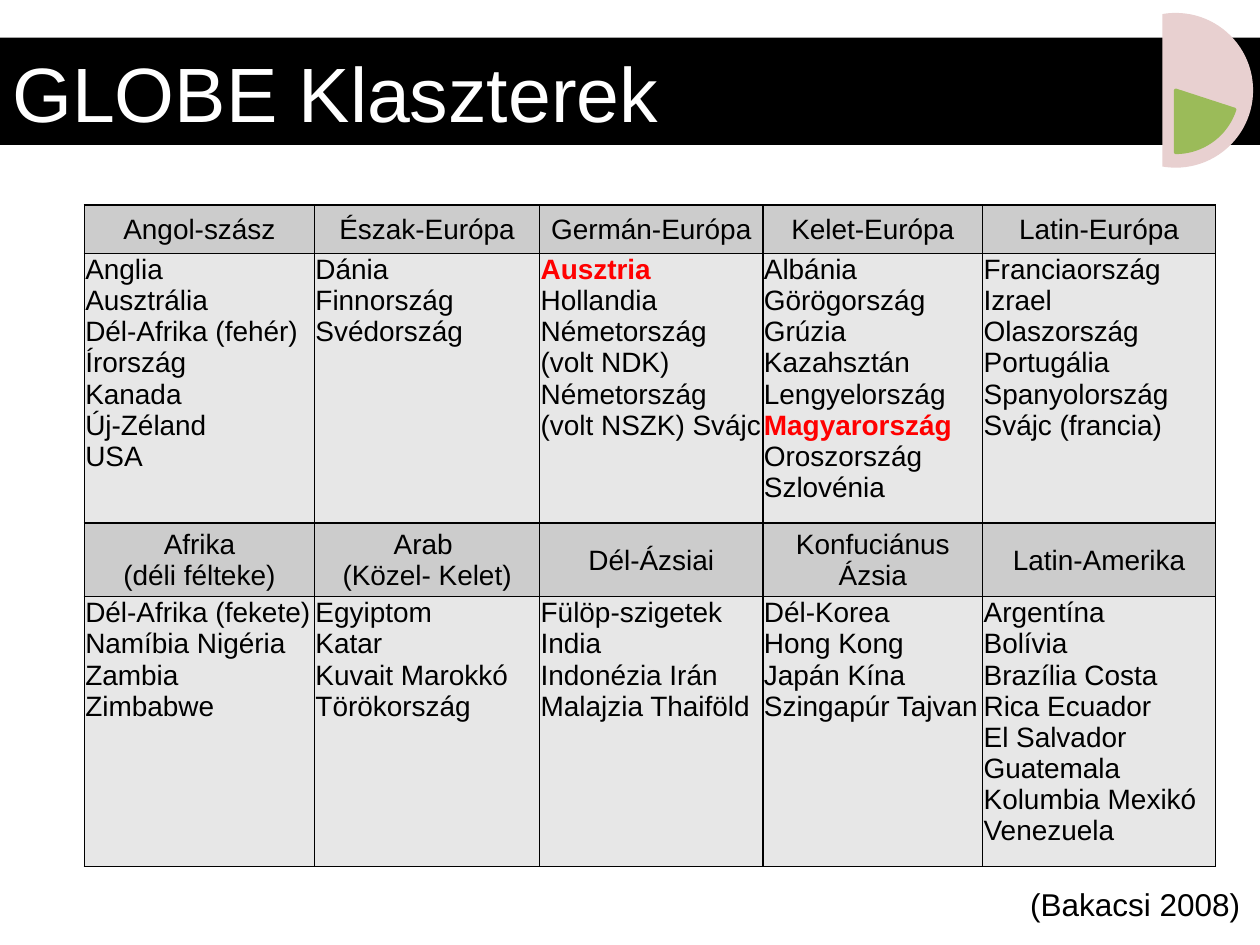
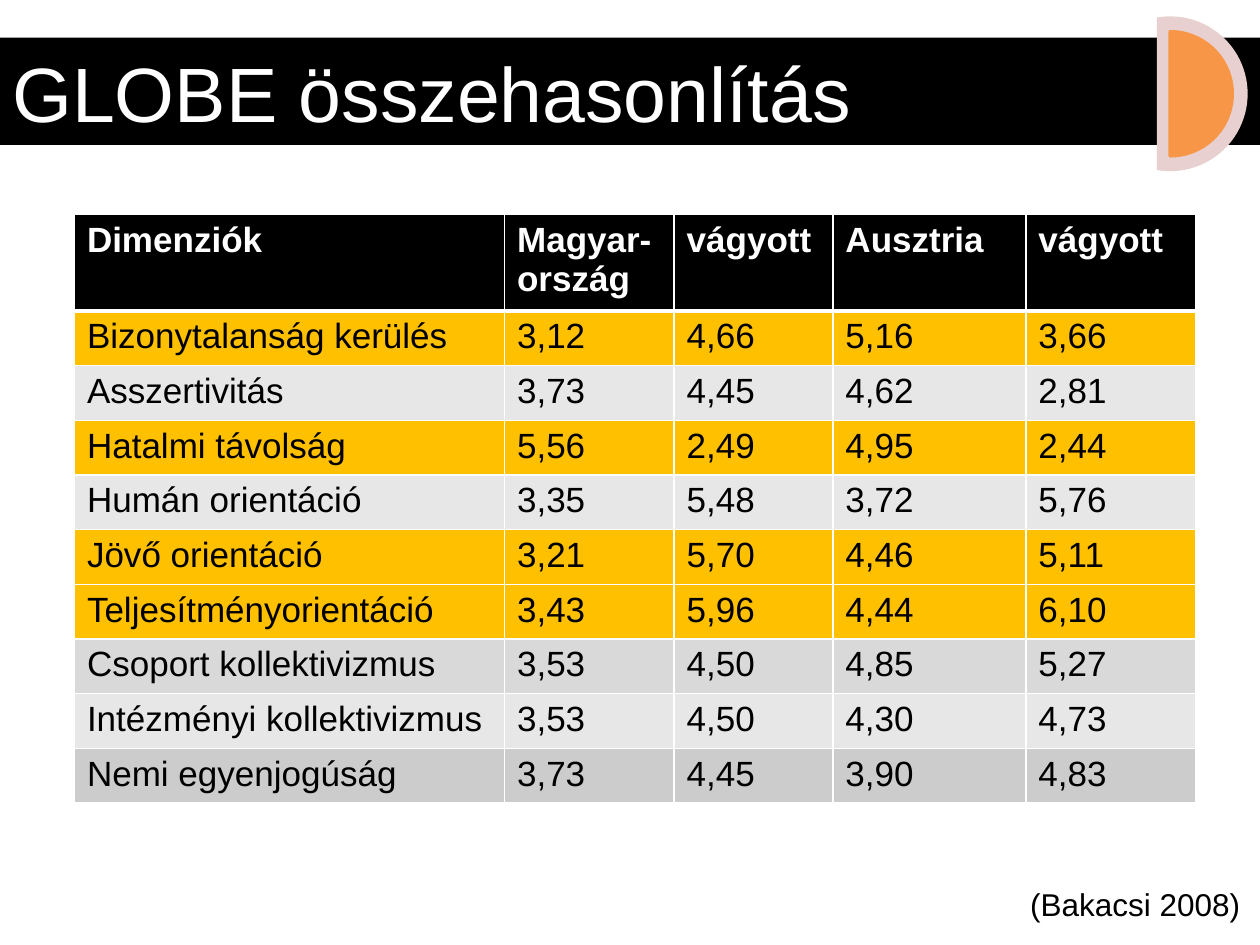
from lxml.etree import SubElement
from pptx import Presentation
from pptx.dml.color import RGBColor
from pptx.enum.shapes import MSO_SHAPE
from pptx.enum.text import MSO_ANCHOR, MSO_AUTO_SIZE, PP_ALIGN
from pptx.oxml.ns import qn
from pptx.util import Cm, Pt

BLACK = RGBColor(0x00, 0x00, 0x00)
WHITE = RGBColor(0xFF, 0xFF, 0xFF)
RED = RGBColor(0xFF, 0x00, 0x00)
HEADER_GREY = RGBColor(0xCC, 0xCC, 0xCC)
MIDDLE_GREY = RGBColor(0xD9, 0xD9, 0xD9)
LIGHT_GREY = RGBColor(0xE7, 0xE7, 0xE7)
AMBER = RGBColor(0xFF, 0xC0, 0x00)
ROSE = RGBColor(0xE8, 0xD0, 0xD0)
GREEN = RGBColor(0x9B, 0xBB, 0x59)
ORANGE = RGBColor(0xF7, 0x96, 0x46)

FONT = "Arial"
CITATION = "(Bakacsi 2008)"

CLUSTER_WIDTHS = [4.64, 4.54, 4.5, 4.43, 4.69]
CLUSTER_HEIGHTS = [0.98, 5.04, 1.48, 5.05]
CLUSTERS = [
    ["Angol-szász", "Észak-Európa", "Germán-Európa", "Kelet-Európa", "Latin-Európa"],
    [
        "Anglia\nAusztrália\nDél-Afrika (fehér)\nÍrország\nKanada\nÚj-Zéland\nUSA",
        "Dánia\nFinnország\nSvédország",
        "*Ausztria*\nHollandia\nNémetország (volt NDK) Németország (volt NSZK) Svájc",
        "Albánia\nGörögország\nGrúzia Kazahsztán Lengyelország *Magyarország* Oroszország Szlovénia",
        "Franciaország\nIzrael\nOlaszország Portugália Spanyolország Svájc (francia)",
    ],
    [
        "Afrika\n(déli félteke)",
        "Arab \n(Közel- Kelet)",
        "Dél-Ázsiai",
        "Konfuciánus\nÁzsia",
        "Latin-Amerika",
    ],
    [
        "Dél-Afrika (fekete)\nNamíbia Nigéria Zambia Zimbabwe",
        "Egyiptom\nKatar\nKuvait Marokkó Törökország",
        "Fülöp-szigetek\nIndia\nIndonézia Irán Malajzia Thaiföld",
        "Dél-Korea\nHong Kong\nJapán Kína Szingapúr Tajvan",
        "Argentína\nBolívia\nBrazília Costa Rica Ecuador\nEl Salvador\n"
        "Guatemala Kolumbia Mexikó Venezuela",
    ],
]

DIMENSION_WIDTHS = [8.67, 3.42, 3.2, 3.89, 3.42]
DIMENSION_HEIGHTS = [1.81] + [1.04] * 7 + [1.09] * 2
DIMENSIONS = [
    (BLACK, ["Dimenziók", "Magyar-ország", "vágyott", "Ausztria", "vágyott"]),
    (AMBER, ["Bizonytalanság kerülés", "3,12", "4,66", "5,16", "3,66"]),
    (LIGHT_GREY, ["Asszertivitás", "3,73", "4,45", "4,62", "2,81"]),
    (AMBER, ["Hatalmi távolság", "5,56", "2,49", "4,95", "2,44"]),
    (LIGHT_GREY, ["Humán orientáció", "3,35", "5,48", "3,72", "5,76"]),
    (AMBER, ["Jövő orientáció", "3,21", "5,70", "4,46", "5,11"]),
    (AMBER, ["Teljesítményorientáció", "3,43", "5,96", "4,44", "6,10"]),
    (MIDDLE_GREY, ["Csoport kollektivizmus", "3,53", "4,50", "4,85", "5,27"]),
    (LIGHT_GREY, ["Intézményi kollektivizmus", "3,53", "4,50", "4,30", "4,73"]),
    (HEADER_GREY, ["Nemi egyenjogúság", "3,73", "4,45", "3,90", "4,83"]),
]


def add_span(para, text, size, colour, bold=False):
    for index, line in enumerate(text.split("\n")):
        if index:
            para.add_line_break()
        if line:
            span = para.add_run()
            span.text = line
            span.font.name = FONT
            span.font.size = Pt(size)
            span.font.bold = bold
            span.font.color.rgb = colour


def add_title(page, text):
    band = page.shapes.add_shape(MSO_SHAPE.RECTANGLE, 0, Cm(0.76), Cm(25.4), Cm(2.16))
    band.shadow.inherit = False
    band.fill.solid()
    band.fill.fore_color.rgb = BLACK
    band.line.fill.background()
    frame = band.text_frame
    frame.word_wrap = True
    frame.vertical_anchor = MSO_ANCHOR.MIDDLE
    para = frame.paragraphs[0]
    para.alignment = PP_ALIGN.LEFT
    add_span(para, text, 44, WHITE)


def add_citation(page):
    box = page.shapes.add_textbox(Cm(17.1), Cm(17.72), Cm(8.15), Cm(1.02))
    frame = box.text_frame
    frame.word_wrap = True
    frame.auto_size = MSO_AUTO_SIZE.SHAPE_TO_FIT_TEXT
    para = frame.paragraphs[0]
    para.alignment = PP_ALIGN.RIGHT
    add_span(para, CITATION, 18, BLACK)


def add_sector(group, kind, left, top, size, angles, colour):
    sector = group.shapes.add_shape(kind, Cm(left), Cm(top), Cm(size), Cm(size))
    for index, angle in enumerate(angles):
        sector.adjustments[index] = angle * 0.6
    sector.rotation = 180
    sector.shadow.inherit = False
    sector.fill.solid()
    sector.fill.fore_color.rgb = colour
    return sector


def add_wheel(page, left, top, start_angle, colour):
    group = page.shapes.add_group_shape()
    rim = add_sector(group, MSO_SHAPE.CHORD, left, top, 3.12, (80, 280), ROSE)
    rim.line.fill.background()
    slice_ = add_sector(group, MSO_SHAPE.PIE, left + 0.31, top + 0.31, 2.5,
                        (start_angle, 270), colour)
    slice_.line.color.rgb = colour
    slice_.line.width = Pt(2)


def add_grid(page, left, top, widths, heights):
    frame = page.shapes.add_table(len(heights), len(widths), Cm(left), Cm(top),
                                  Cm(sum(widths)), Cm(sum(heights)))
    table = frame.table
    table.first_row = False
    table.horz_banding = False
    for column, width in zip(table.columns, widths):
        column.width = Cm(width)
    for row, height in zip(table.rows, heights):
        row.height = Cm(height)
    return table


def style_cell(cell, fill, border, top=1, bottom=1):
    properties = cell._tc.get_or_add_tcPr()
    for side, width in (("L", 1), ("R", 1), ("T", top), ("B", bottom)):
        line = SubElement(properties, qn(f"a:ln{side}"), w=str(Pt(width)))
        SubElement(SubElement(line, qn("a:solidFill")), qn("a:srgbClr"), val=str(border))
    cell.fill.solid()
    cell.fill.fore_color.rgb = fill


def add_clusters(page):
    table = add_grid(page, 1.7, 4.13, CLUSTER_WIDTHS, CLUSTER_HEIGHTS)
    for row, texts in enumerate(CLUSTERS):
        is_heading = row % 2 == 0
        for column, text in enumerate(texts):
            cell = table.cell(row, column)
            style_cell(cell, HEADER_GREY if is_heading else LIGHT_GREY, BLACK)
            cell.margin_left = cell.margin_right = cell.margin_top = Cm(0.02)
            cell.margin_bottom = 0
            para = cell.text_frame.paragraphs[0]
            if is_heading:
                cell.vertical_anchor = MSO_ANCHOR.MIDDLE
                para.alignment = PP_ALIGN.CENTER
            for index, part in enumerate(text.split("*")):
                marked = index % 2 == 1
                add_span(para, part, 16, RED if marked else BLACK, marked)


def add_comparison(page):
    table = add_grid(page, 1.5, 4.32, DIMENSION_WIDTHS, DIMENSION_HEIGHTS)
    for row, (fill, texts) in enumerate(DIMENSIONS):
        is_heading = row == 0
        for column, text in enumerate(texts):
            cell = table.cell(row, column)
            style_cell(cell, fill, WHITE, top=3 if row == 1 else 1,
                       bottom=3 if is_heading else 1)
            add_span(cell.text_frame.paragraphs[0], text, 20,
                     WHITE if is_heading else BLACK, is_heading)


def add_page(deck, title):
    page = deck.slides.add_slide(deck.slide_layouts[6])
    add_title(page, title)
    add_citation(page)
    return page


def main():
    deck = Presentation()
    deck.slide_width = Cm(25.4)
    deck.slide_height = Cm(19.05)

    page = add_page(deck, "GLOBE Klaszterek")
    add_clusters(page)
    add_wheel(page, 22.14, 0.26, 198, GREEN)

    page = add_page(deck, "GLOBE összehasonlítás")
    add_wheel(page, 22.03, 0.33, 90, ORANGE)
    add_comparison(page)

    deck.save("out.pptx")


if __name__ == "__main__":
    main()
